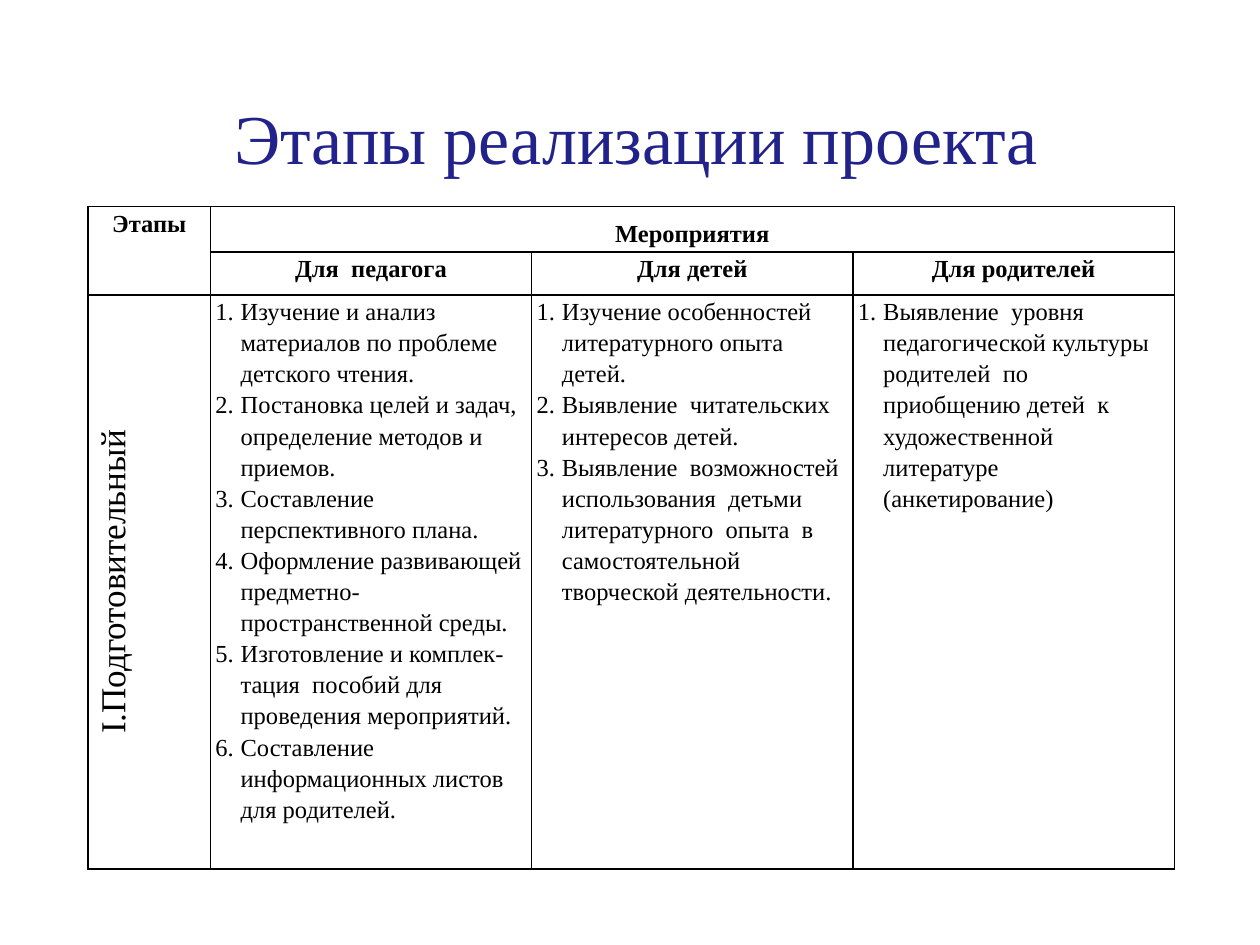
from lxml import etree
from pptx import Presentation
from pptx.dml.color import RGBColor
from pptx.enum.text import MSO_ANCHOR, PP_ALIGN
from pptx.oxml.ns import qn
from pptx.util import Inches, Pt

FONT = "Times New Roman"
NAVY = RGBColor(0x22, 0x22, 0x8B)
BLACK = RGBColor(0, 0, 0)

TITLE = "Этапы реализации проекта"
STAGES_HEADING = "Этапы"
EVENTS_HEADING = "Мероприятия"
STAGE = "I.Подготовительный"
AUDIENCES = [
    ("Для  педагога", [
        "Изучение и анализ материалов по проблеме детского чтения.",
        "Постановка целей и задач, определение методов и приемов.",
        "Составление перспективного плана.",
        "Оформление развивающей предметно-пространственной среды.",
        "Изготовление и комплек-тация  пособий для проведения мероприятий.",
        "Составление информационных листов  для родителей.",
    ]),
    ("Для детей", [
        "Изучение особенностей литературного опыта детей.",
        "Выявление  читательских интересов детей.",
        "Выявление  возможностей  использования  детьми литературного  опыта  в  "
        "самостоятельной  творческой деятельности.",
    ]),
    ("Для родителей", [
        "Выявление  уровня педагогической культуры родителей  по приобщению детей  к "
        "художественной литературе  (анкетирование)",
    ]),
]
COLUMN_WIDTHS = [0.97] + [2.55] * len(AUDIENCES)
ROW_HEIGHTS = [0.36, 0.34, 4.54]


def style(para, size, color=BLACK, bold=False):
    for span in para.runs:
        span.font.name = FONT
        span.font.size = Pt(size)
        span.font.bold = bold
        span.font.color.rgb = color


def write_centred(cell, words, size=14, bold=True, spacing=1.15):
    para = cell.text_frame.paragraphs[0]
    para.text = words
    para.alignment = PP_ALIGN.CENTER
    para.line_spacing = spacing
    style(para, size, bold=bold)


def write_numbered(cell, items):
    frame = cell.text_frame
    frame.text = "\n".join(items)
    for para in frame.paragraphs:
        para.line_spacing = 1.15
        properties = para._p.get_or_add_pPr()
        properties.set("marL", str(Inches(0.2)))
        properties.set("indent", str(Inches(-0.2)))
        etree.SubElement(properties, qn("a:buFont"), typeface="+mj-lt")
        etree.SubElement(properties, qn("a:buAutoNum"), type="arabicPeriod")
        style(para, 14)


def format_cell(cell):
    """Clear the fill, set the margins and draw a thin black border on each side."""
    cell.fill.background()
    cell.margin_left = cell.margin_right = Inches(0.04)
    cell.margin_top = cell.margin_bottom = 0
    properties = cell._tc.get_or_add_tcPr()
    for position, side in enumerate(("lnL", "lnR", "lnT", "lnB")):
        line = etree.Element(qn(f"a:{side}"), w=str(Pt(1)))
        fill = etree.SubElement(line, qn("a:solidFill"))
        etree.SubElement(fill, qn("a:srgbClr"), val=str(BLACK))
        properties.insert(position, line)


def add_title(page):
    box = page.shapes.add_textbox(Inches(0.62), Inches(0.7), Inches(8.86), Inches(0.77))
    frame = box.text_frame
    frame.word_wrap = True
    frame.vertical_anchor = MSO_ANCHOR.MIDDLE
    para = frame.paragraphs[0]
    para.text = TITLE
    para.alignment = PP_ALIGN.CENTER
    style(para, 40, NAVY)


def add_stage_table(page):
    table = page.shapes.add_table(
        len(ROW_HEIGHTS), len(COLUMN_WIDTHS), Inches(0.7), Inches(1.64),
        Inches(sum(COLUMN_WIDTHS)), Inches(sum(ROW_HEIGHTS))).table
    table.first_row = table.horz_banding = False
    for column, width in zip(table.columns, COLUMN_WIDTHS):
        column.width = Inches(width)
    for row, height in zip(table.rows, ROW_HEIGHTS):
        row.height = Inches(height)
    for cell in table.iter_cells():
        format_cell(cell)

    table.cell(0, 0).merge(table.cell(1, 0))
    table.cell(0, 1).merge(table.cell(0, len(AUDIENCES)))
    write_centred(table.cell(0, 0), STAGES_HEADING)
    write_centred(table.cell(0, 1), EVENTS_HEADING, spacing=1.5)

    stage = table.cell(2, 0)
    write_centred(stage, STAGE, size=20, bold=False)
    stage.vertical_anchor = MSO_ANCHOR.MIDDLE
    stage._tc.get_or_add_tcPr().set("vert", "vert270")

    for column, (audience, items) in enumerate(AUDIENCES, start=1):
        write_centred(table.cell(1, column), audience)
        write_numbered(table.cell(2, column), items)


def main():
    deck = Presentation()
    deck.slide_width, deck.slide_height = Inches(10), Inches(7.5)
    page = deck.slides.add_slide(deck.slide_layouts[6])
    add_title(page)
    add_stage_table(page)
    deck.save("out.pptx")


if __name__ == "__main__":
    main()
